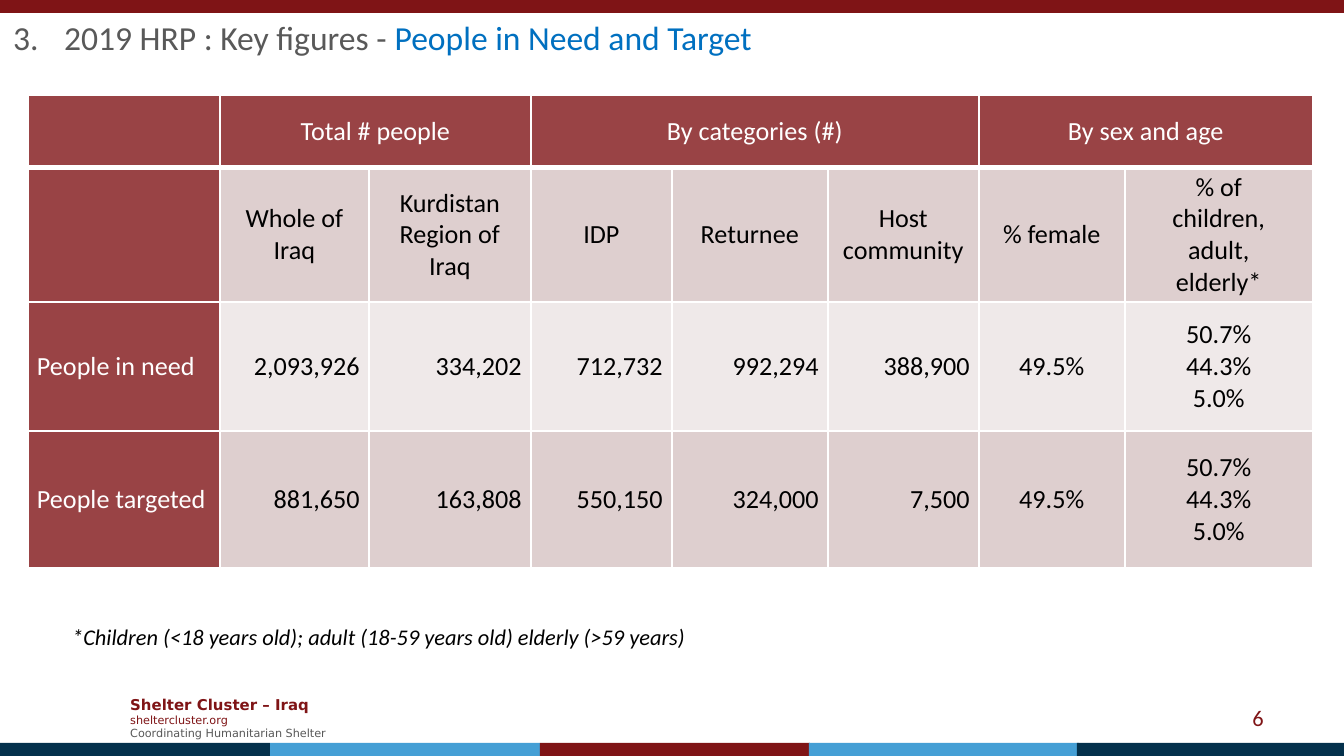
from lxml.etree import SubElement
from pptx import Presentation
from pptx.dml.color import RGBColor
from pptx.enum.shapes import MSO_SHAPE
from pptx.enum.text import MSO_ANCHOR, PP_ALIGN
from pptx.oxml.ns import qn
from pptx.util import Pt

PX = 914400 / 134.4
COLORS = {
    "maroon": "7F1416", "navy": "04314C", "sky": "459FD5", "grey": "595959",
    "blue": "0070C0", "head": "994345", "band": "DECFCF", "pale": "EFE9E9",
    "white": "FFFFFF", "black": "000000",
}


def px(length):
    return round(length * PX)


def add_run(paragraph, text, color, **formats):
    run = paragraph.add_run()
    run.text = text
    run.font.color.rgb = RGBColor.from_string(COLORS[color])
    for name, value in ({"name": "Calibri"} | formats).items():
        setattr(run.font, name, value)


prs = Presentation()
prs.slide_width, prs.slide_height = px(1344), px(756)
slide = prs.slides.add_slide(prs.slide_layouts[6])
shapes = slide.shapes

# Top bar and the five-part bottom bar
bars = [(0, 0, 1344, "maroon")]
bars += [(left, 743, 270, color) for left, color in zip(
    (0, 270, 540, 809, 1077), ("navy", "sky", "maroon", "sky", "navy"))]
for left, top, width, color in bars:
    bar = shapes.add_shape(MSO_SHAPE.RECTANGLE, px(left), px(top), px(width), px(13))
    bar.shadow.inherit = False
    bar.fill.solid()
    bar.fill.fore_color.rgb = RGBColor.from_string(COLORS[color])
    bar.line.fill.background()

# Text around the table: box, wrap, anchor, alignment, paragraphs of runs
MIDDLE, TOP = MSO_ANCHOR.MIDDLE, MSO_ANCHOR.TOP
LEFT, CENTER, RIGHT = PP_ALIGN.LEFT, PP_ALIGN.CENTER, PP_ALIGN.RIGHT
small = {"name": "DejaVu Sans", "size": Pt(6)}
title_size = {"size": Pt(18)}
texts = [
    ((117, 688, 233, 59), True, MIDDLE, LEFT, [
        [("Shelter Cluster – Iraq", "maroon", small | {"size": Pt(8), "bold": True})],
        [("sheltercluster.org", "maroon", small)],
        [("Coordinating Humanitarian Shelter", "grey", small)]]),
    ((964, 698, 313, 40), True, MIDDLE, RIGHT, [[("6", "maroon", {"size": Pt(12)})]]),
    ((0, 12, 1344, 50), True, MIDDLE, LEFT, [
        [("2019 HRP : Key figures - ", "grey", title_size),
         ("People in Need and Target", "blue", title_size)]]),
    ((59, 617, 652, 40), False, TOP, LEFT, [
        [("*Children (˂18 years old); adult (18-59 years old) elderly (˃59 years)",
          "black", {"size": Pt(12), "italic": True})]]),
]
for box, wrap, anchor, alignment, paragraphs in texts:
    frame = shapes.add_textbox(*map(px, box)).text_frame
    frame.word_wrap = wrap
    frame.vertical_anchor = anchor
    for i, runs in enumerate(paragraphs):
        paragraph = frame.add_paragraph() if i else frame.paragraphs[0]
        paragraph.alignment = alignment
        if runs[0][2] is title_size:
            numbering = paragraph._p.get_or_add_pPr()
            numbering.set("marL", str(px(51)))
            numbering.set("indent", str(-px(51)))
            SubElement(numbering, qn("a:buFont"), typeface="+mj-lt")
            SubElement(numbering, qn("a:buAutoNum"), type="arabicPeriod", startAt="3")
        for text, color, formats in runs:
            add_run(paragraph, text, color, **formats)

# Key figures
ages = "50.7%\n44.3%\n5.0%"
figures = [
    ["", "Total # people", "", "By categories (#)", "", "", "By sex and age", ""],
    ["", "Whole of Iraq", "Kurdistan Region of Iraq", "IDP", "Returnee",
     "Host community", "% female", "% of\nchildren,\nadult,\nelderly*"],
    ["People in need", "2,093,926", "334,202", "712,732", "992,294", "388,900",
     "49.5%", ages],
    ["People targeted", "881,650", "163,808", "550,150", "324,000", "7,500",
     "49.5%", ages],
]
column_widths = [192, 149, 162, 141, 156, 151, 146, 188]
row_heights = [73, 134, 129, 137]
row_fills = ["head", "band", "pale", "band"]
table = shapes.add_table(4, 8, px(28), px(95), px(sum(column_widths)),
                         px(sum(row_heights))).table
for column, width in zip(table.columns, column_widths):
    column.width = px(width)
for row, height in zip(table.rows, row_heights):
    row.height = px(height)
for first, last in ((1, 2), (3, 5), (6, 7)):
    table.cell(0, first).merge(table.cell(0, last))

cell_format = {"vertical_anchor": MIDDLE, "margin_left": px(9), "margin_right": px(9),
               "margin_top": 0, "margin_bottom": 0}
for r, values in enumerate(figures):
    for c, value in enumerate(values):
        cell = table.cell(r, c)
        for name, setting in cell_format.items():
            setattr(cell, name, setting)
        for side in "LRTB":
            thick = (r, side) in ((0, "B"), (1, "T"))
            border = SubElement(cell._tc.get_or_add_tcPr(), qn(f"a:ln{side}"),
                                w=str(Pt(3 if thick else 1)))
            SubElement(SubElement(border, qn("a:solidFill")), qn("a:srgbClr"),
                       val=COLORS["white"])
        heading = r == 0 or c == 0
        cell.fill.solid()
        cell.fill.fore_color.rgb = RGBColor.from_string(
            COLORS["head" if heading else row_fills[r]])
        if not value:
            continue
        for i, line in enumerate(value.split("\n")):
            frame = cell.text_frame
            paragraph = frame.add_paragraph() if i else frame.paragraphs[0]
            if r < 2 or c > 5:
                paragraph.alignment = CENTER
            else:
                paragraph.alignment = RIGHT if c else LEFT
            add_run(paragraph, line, "white" if heading else "black",
                    size=Pt(14), bold=False)

prs.save("out.pptx")
